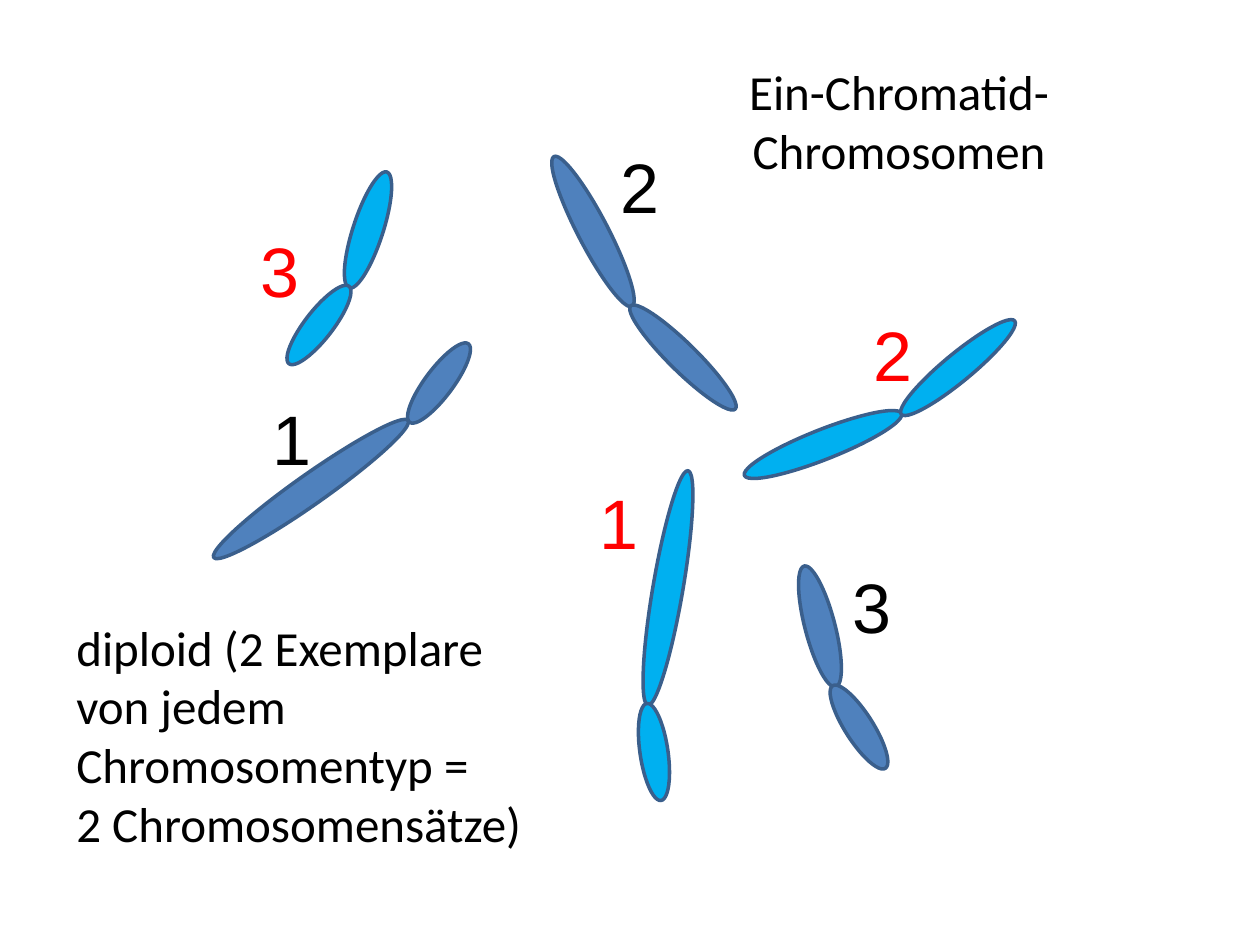
from pptx import Presentation
from pptx.dml.color import RGBColor
from pptx.enum.shapes import MSO_SHAPE as Shape
from pptx.enum.text import PP_ALIGN as Align
from pptx.util import Pt

EMU_PER_PX = 914400 / 126
DARK, LIGHT, OUTLINE = "4F81BD", "00B0F0", "3A5F8C"
BLACK, RED = "000000", "FF0000"
LONG_WIDTH, SHORT_WIDTH = 30, 28

# Each arm: left, top, length, rotation
CHROMOSOMES = [
    (DARK, (296, 370, 238, 234.8), (425, 334, 98, 216.8)),
    (LIGHT, (653, 469, 238, 9.7), (640, 703, 98, 351.7)),
    (DARK, (805, 564, 125, 345.4), (845, 678, 98, 327.5)),
    (LIGHT, (353, 169, 122, 18), (305, 276, 98, 37.8)),
    (DARK, (578, 147, 169, 332.5), (669, 284, 147, 314.6)),
    (LIGHT, (808, 360, 169, 248.5), (944, 294, 147, 230.5)),
]

# Each number: text, colour, indent
NUMBERS = [
    ("2", BLACK, 474),
    ("3", RED, 114),
    ("2", RED, 727),
    ("1", BLACK, 126),
    ("1", RED, 453),
    ("3", BLACK, 706),
]


def px(length):
    """Turn pixels into EMU."""
    return round(length * EMU_PER_PX)


def rgb(value):
    """Turn a hex string into a colour."""
    return RGBColor.from_string(value)


def add_arm(slide, arm, width, colour):
    """Draw one chromosome arm as a rotated ellipse."""
    left, top, length, rotation = arm
    ellipse = slide.shapes.add_shape(
        Shape.OVAL, px(left), px(top), px(width), px(length))
    ellipse.rotation = rotation
    ellipse.shadow.inherit = False
    ellipse.fill.solid()
    ellipse.fill.fore_color.rgb = rgb(colour)
    ellipse.line.color.rgb = rgb(OUTLINE)
    ellipse.line.width = Pt(2)


def add_frame(slide, left, top, width, height):
    """Add an empty wrapping text box and return its text frame."""
    box = slide.shapes.add_textbox(px(left), px(top), px(width), px(height))
    box.text_frame.word_wrap = True
    return box.text_frame


def write(paragraph, text, *, size=28, font="Calibri", colour=BLACK,
          align=Align.LEFT, indent=0, line_height=None):
    """Write formatted text into a paragraph."""
    paragraph.alignment = align
    if line_height:
        paragraph.line_spacing = Pt(line_height)
    if indent:
        properties = paragraph._p.get_or_add_pPr()
        properties.set("marL", str(px(indent)))
        properties.set("indent", "0")
    run = paragraph.add_run()
    run.text = text
    run.font.size = Pt(size)
    run.font.name = font
    run.font.color.rgb = rgb(colour)


def next_paragraph(frame, index):
    """Return the first paragraph of a frame, or a new one after it."""
    return frame.add_paragraph() if index else frame.paragraphs[0]


def main():
    """Build the chromosome slide."""
    deck = Presentation()
    deck.slide_width, deck.slide_height = px(1260), px(945)
    slide = deck.slides.add_slide(deck.slide_layouts[6])

    for colour, long_arm, short_arm in CHROMOSOMES:
        add_arm(slide, long_arm, LONG_WIDTH, colour)
        add_arm(slide, short_arm, SHORT_WIDTH, colour)

    heading = add_frame(slide, 593, 55, 612, 131)
    write(heading.paragraphs[0], "Ein-Chromatid-Chromosomen",
          align=Align.CENTER)

    explanation = add_frame(slide, 64, 611, 478, 251)
    lines = ("diploid (2 Exemplare von jedem Chromosomentyp =",
             "2 Chromosomensätze)")
    for index, line in enumerate(lines):
        write(next_paragraph(explanation, index), line)

    numbering = add_frame(slide, 134, 137, 863, 522)
    for index, (number, colour, indent) in enumerate(NUMBERS):
        write(next_paragraph(numbering, index), number, size=40, font="Arial",
              colour=colour, indent=indent, line_height=48)

    deck.save("out.pptx")


if __name__ == "__main__":
    main()
